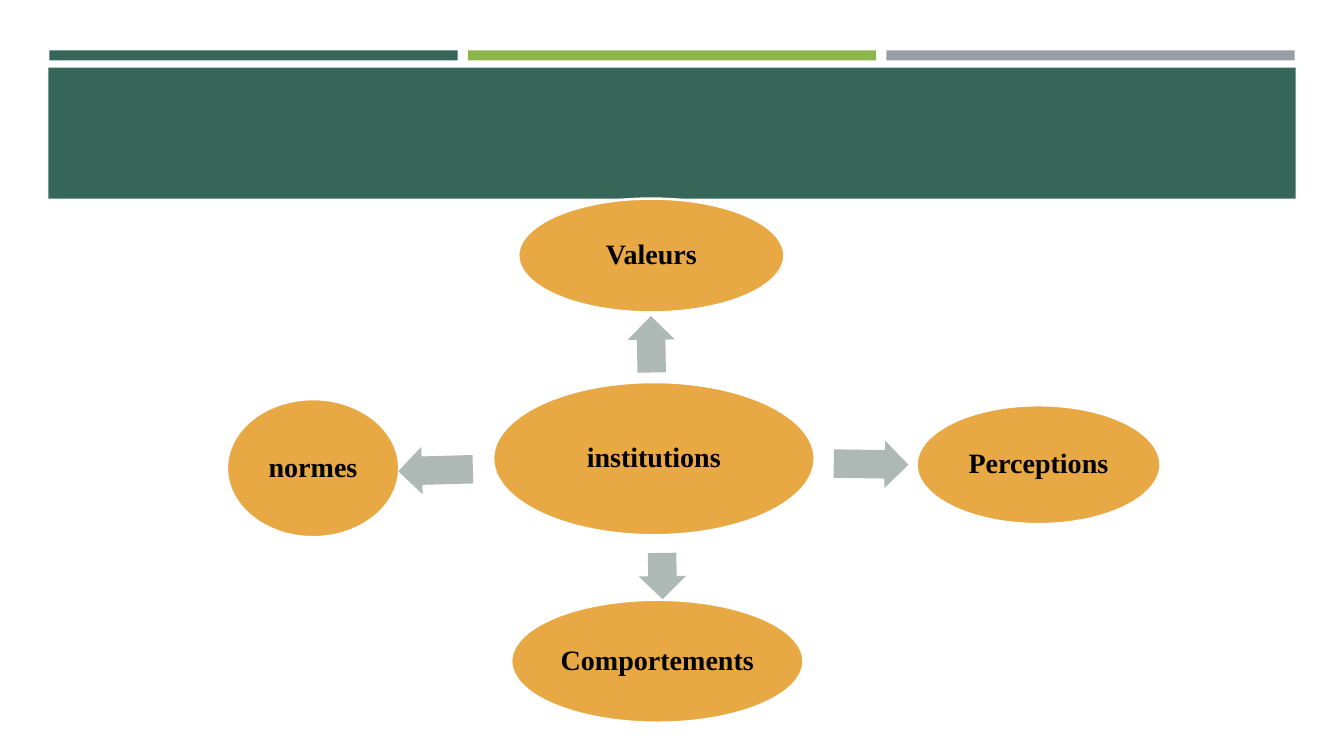
from pptx import Presentation
from pptx.dml.color import RGBColor
from pptx.enum.shapes import MSO_SHAPE
from pptx.enum.text import MSO_ANCHOR, PP_ALIGN
from pptx.util import Pt

PX = 9144
COLORS = {
    "green": "366658",
    "lime": "8CB64A",
    "slate": "969FA7",
    "amber": "E8A844",
    "arrow": "AEB8B5",
    "white": "FFFFFF",
    "black": "000000",
}

deck = Presentation()
deck.slide_width, deck.slide_height = 1333 * PX, 750 * PX
slide = deck.slides.add_slide(deck.slide_layouts[6])


def add_block(kind, box, color, outline=None):
    block = slide.shapes.add_shape(kind, *(n * PX for n in box))
    block.shadow.inherit = False
    block.fill.solid()
    block.fill.fore_color.rgb = RGBColor.from_string(COLORS[color])
    if outline:
        block.line.color.rgb = RGBColor.from_string(COLORS[outline])
        block.line.width = Pt(1.75)
    else:
        block.line.fill.background()
    return block


def write_text(block, text, size=20, font="Times New Roman", color="black", bold=True):
    frame = block.text_frame
    frame.word_wrap = True
    frame.vertical_anchor = MSO_ANCHOR.MIDDLE
    frame.margin_left = frame.margin_right = 3 * PX
    frame.margin_top = frame.margin_bottom = 3 * PX
    paragraph = frame.paragraphs[0]
    paragraph.alignment = PP_ALIGN.CENTER
    paragraph.line_spacing = 0.9
    run = paragraph.add_run()
    run.text = text
    run.font.size = Pt(size)
    run.font.name = font
    run.font.bold = bold
    run.font.color.rgb = RGBColor.from_string(COLORS[color])


for column, color in enumerate(["green", "lime", "slate"]):
    add_block(MSO_SHAPE.RECTANGLE, (49 + 415 * column, 50, 405, 10), color)
add_block(MSO_SHAPE.RECTANGLE, (48, 67, 1237, 130), "green")

concepts = [
    ("institutions", (489, 379, 319, 152)),
    ("Valeurs", (514, 197, 264, 113)),
    ("Perceptions", (909, 402, 242, 118)),
    ("Comportements", (507, 595, 290, 122)),
    ("normes", (225, 396, 171, 137)),
]
for concept, box in concepts:
    write_text(add_block(MSO_SHAPE.OVAL, box, "amber", outline="white"), concept)

directions = [
    ((618, 318, 56, 47), 269.2),
    ((827, 437, 74, 47), 0.9),
    ((634, 548, 46, 47), 89.2),
    ((395, 443, 74, 47), 178.4),
]
for box, angle in directions:
    arrow = add_block(MSO_SHAPE.RIGHT_ARROW, box, "arrow")
    arrow.adjustments[0] = 0.6
    arrow.adjustments[1] = 0.5
    arrow.rotation = angle

deck.save("out.pptx")
